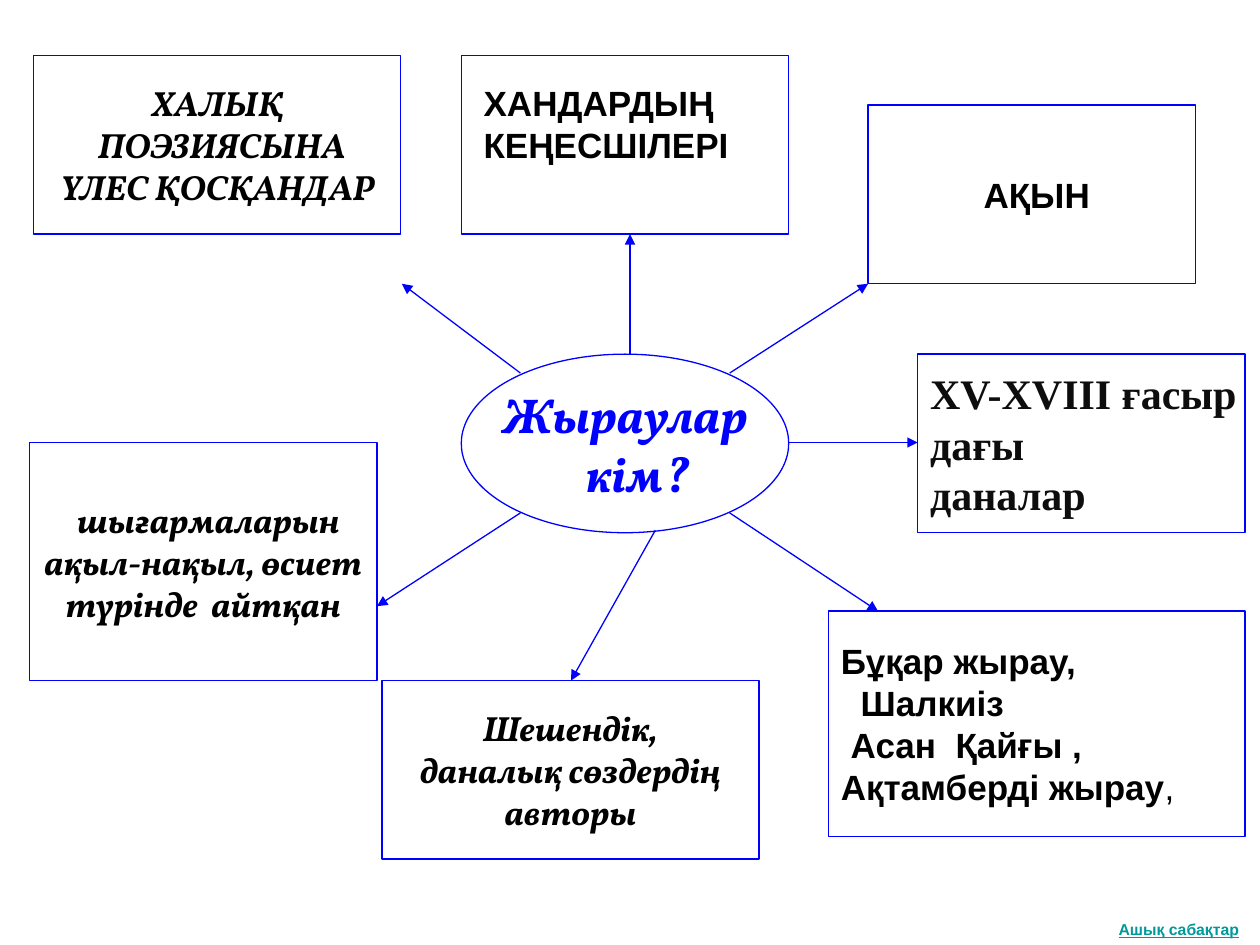
import pptx
import pptx.dml.color
import pptx.enum.dml
import pptx.enum.shapes
import pptx.enum.text
import pptx.oxml.ns
import pptx.util
from lxml import etree

Cm, Pt = pptx.util.Cm, pptx.util.Pt
RGB = pptx.dml.color.RGBColor.from_string
SHAPES = pptx.enum.shapes.MSO_SHAPE
ALIGN = pptx.enum.text.PP_ALIGN
MIDDLE = pptx.enum.text.MSO_ANCHOR.MIDDLE
qn = pptx.oxml.ns.qn

THEME = {
    "paper": "FFFFFF",
    "line": "0000FF",
    "line_width": 0.75,
    "inset": 0.25,
    # style: font, size, colour, italic
    "centre": ("Vollkorn", 28, "0000FF", True),
    "serif": ("Vollkorn", 20, "000000", True),
    "sans": ("Arial", 20, "000000", False),
    "century": ("Times New Roman", 24, "0D0D0D", False),
    "footer": ("Arial", 9, "009999", False),
}

# A line is its text, or (indent in cm, text, plain ending).
QUESTION = ["Жыраулар", (0.5, "кім?", "")]
QUESTION_PLACE = (9.3, 7.14, 6.6, 3.6)

# place (cm), style, centred, space kept free below the text (cm), lines
ANSWERS = [
    ((18.5, 7.14, 6.6, 3.6), "century", False, 0,
     ["XV-XVIII ғасыр", "дағы", "даналар"]),
    ((17.5, 2.12, 6.6, 3.6), "sans", True, 0, [(0.2, "АҚЫН", "")]),
    ((0.68, 1.12, 7.4, 3.6), "serif", True, 0,
     ["ХАЛЫҚ", (0.2, "ПОЭЗИЯСЫНА", ""), "ҮЛЕС ҚОСҚАНДАР"]),
    ((7.7, 13.72, 7.6, 3.6), "serif", True, 0,
     ["Шешендік,", "даналық сөздердің", "авторы"]),
    ((9.3, 1.12, 6.6, 3.6), "sans", False, 0.85,
     [(0.2, "ХАНДАРДЫҢ", ""), (0.2, "КЕҢЕСШІЛЕРІ", "")]),
    ((0.6, 8.92, 7, 4.8), "serif", True, 0,
     [(0.2, "шығармаларын", ""), "ақыл-нақыл, өсиет", "түрінде  айтқан"]),
    ((16.7, 12.32, 8.4, 4.55), "sans", False, 0,
     ["Бұқар жырау,", (0.4, "Шалкиіз", ""), (0.2, "Асан  Қайғы ,", ""),
      (0, "Ақтамберді жырау", ",")]),
]

# from x, from y, to x, to y (cm)
ARROWS = [
    (12.7, 7.14, 12.7, 4.72),
    (15.9, 8.92, 18.5, 8.92),
    (14.71, 10.34, 17.7, 12.32),
    (14.71, 7.52, 17.5, 5.72),
    (10.49, 7.52, 8.1, 5.72),
    (10.49, 10.34, 7.6, 12.22),
    (13.21, 10.69, 11.51, 13.72),
]

FOOTER = "Ашық сабақтар"
FOOTER_PLACE = (22.3, 18.41, 3.1, 0.64)


def add_span(para, text, style, bold=True):
    span = para.add_run()
    span.text = text
    font = span.font
    font.name, size, colour, font.italic = THEME[style]
    font.size = Pt(size)
    font.bold = bold
    font.color.rgb = RGB(colour)
    return span


def write_lines(box, lines, style, centred, wrap=True, space_below=0):
    frame = box.text_frame
    frame.word_wrap = wrap
    frame.vertical_anchor = MIDDLE
    frame.margin_left = Cm(THEME["inset"])
    frame.margin_right = Cm(THEME["inset"] if centred else 0)
    frame.margin_top = Cm(0.13)
    frame.margin_bottom = Cm(0.13 + space_below)
    for number, line in enumerate(lines):
        indent, text, ending = (0, line, "") if isinstance(line, str) else line
        para = frame.paragraphs[0] if number == 0 else frame.add_paragraph()
        para.alignment = ALIGN.CENTER if centred else ALIGN.LEFT
        if indent:
            para._p.get_or_add_pPr().set("marL", str(Cm(indent)))
        add_span(para, text, style)
        if ending:
            add_span(para, ending, style, bold=False)


def add_outlined(page, kind, place):
    shape = page.shapes.add_shape(kind, *map(Cm, place))
    shape.shadow.inherit = False
    shape.fill.solid()
    shape.fill.fore_color.rgb = RGB(THEME["paper"])
    draw_line(shape.line)
    return shape


def draw_line(line):
    line.color.rgb = RGB(THEME["line"])
    line.width = Pt(THEME["line_width"])


def add_arrow(page, ends):
    arrow = page.shapes.add_connector(
        pptx.enum.shapes.MSO_CONNECTOR.STRAIGHT, *map(Cm, ends))
    draw_line(arrow.line)
    properties = arrow._element.spPr
    etree.SubElement(properties.find(qn("a:ln")), qn("a:tailEnd"), type="triangle")
    etree.SubElement(properties, qn("a:effectLst"))


def main():
    deck = pptx.Presentation()
    deck.slide_width, deck.slide_height = Cm(25.4), Cm(19.05)
    page = deck.slides.add_slide(deck.slide_layouts[6])

    footer = page.shapes.add_textbox(*map(Cm, FOOTER_PLACE))
    write_lines(footer, [FOOTER], "footer", centred=False)
    footer.text_frame.paragraphs[0].runs[0].font.underline = True

    ellipse = add_outlined(page, SHAPES.OVAL, QUESTION_PLACE)
    write_lines(ellipse, QUESTION, "centre", centred=True, wrap=False)

    for ends in ARROWS:
        add_arrow(page, ends)
    for place, style, centred, space_below, lines in ANSWERS:
        box = add_outlined(page, SHAPES.RECTANGLE, place)
        write_lines(box, lines, style, centred, space_below=space_below)

    deck.save("out.pptx")


if __name__ == "__main__":
    main()
